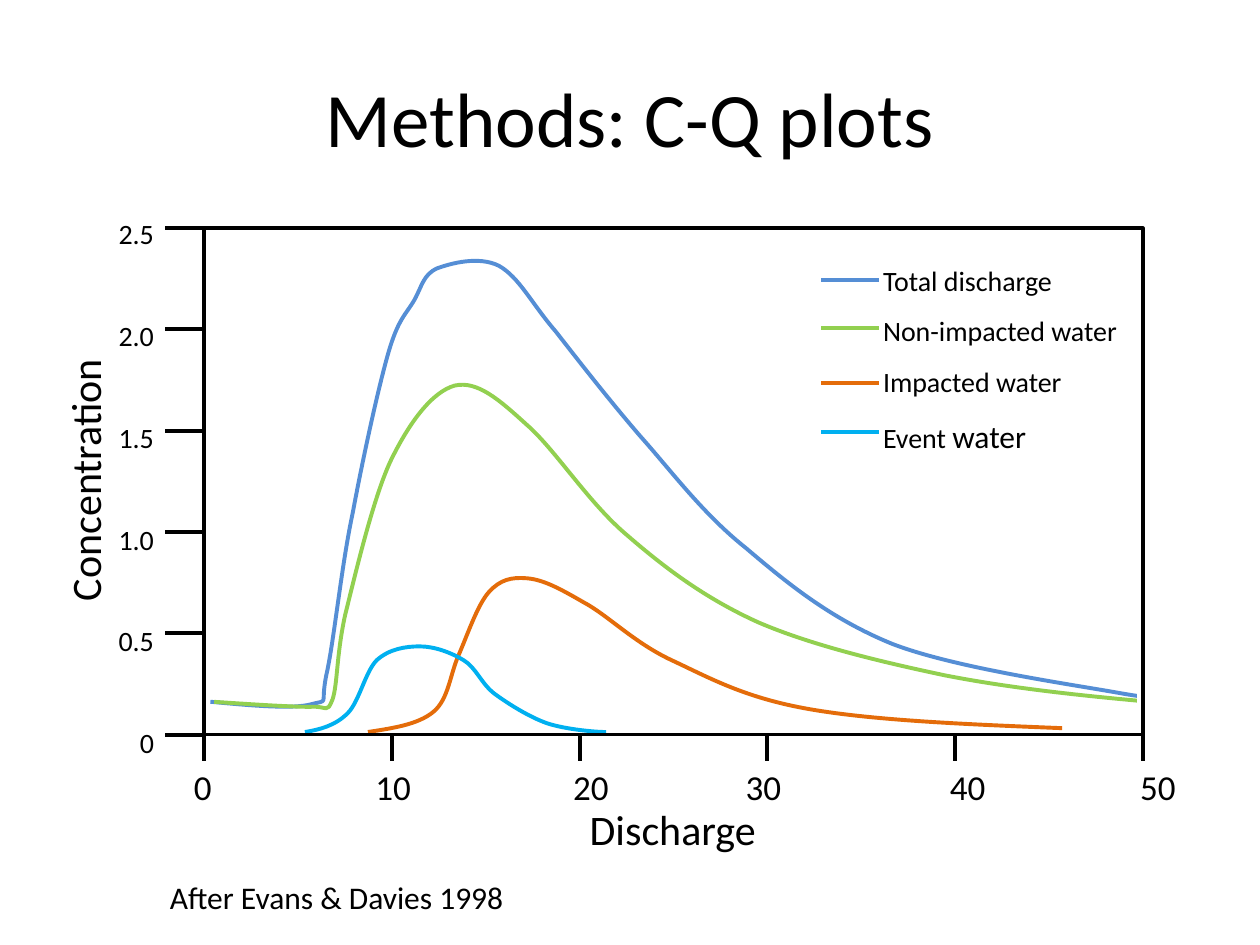
from dataclasses import dataclass
from typing import Optional

from lxml.etree import SubElement
from pptx import Presentation
from pptx.dml.color import RGBColor
from pptx.enum.shapes import MSO_CONNECTOR as Connector, MSO_SHAPE as Preset
from pptx.enum.text import MSO_ANCHOR as Anchor, PP_ALIGN as Align
from pptx.oxml.ns import qn
from pptx.util import Emu, Inches, Pt

COLUMNS, ROWS = 100, 75
CELL = Inches(10) // COLUMNS
STEPS_PER_CELL = 10
FONT = "Calibri"
COLORS = {
    "text": "000000",
    "axis": "000000",
    "paper": "FFFFFF",
    "total": "558ED5",
    "non_impacted": "92D050",
    "impacted": "E46C0A",
    "event": "00B0F0",
}
PLOT_LEFT, PLOT_TOP, PLOT_WIDTH, PLOT_HEIGHT = 16.2, 18.1, 74.5, 40.2
INTERVALS = 5
TICK_DOWN, TICK_LEFT = 2.1, 3.1
LEGEND_LEFT, LEGEND_RIGHT = 65.2, 69.8


@dataclass
class Label:
    lines: list[list[tuple[str, int]]]
    left: float
    top: float
    width: float
    height: float
    align: Align = Align.LEFT
    wrap: bool = True
    anchor: Anchor = Anchor.TOP
    rotation: int = 0
    line_spacing: Optional[float] = None
    gap_before: int = 0
    tab_stops: tuple[float, ...] = ()


@dataclass
class Curve:
    color: str
    legend_row: float
    points: list[tuple[float, float]]


TOTAL = Curve("total", 22.2, [
    (16.7, 55.7), (19.9, 56), (23.2, 56.3), (24.7, 55.9),
    (26.2, 55.5), (25.4, 56.1), (25.9, 53.6), (26.5, 51), (27.1, 44.9), (28, 40.7),
    (28.8, 36.4), (30, 30.9), (30.8, 28.1), (31.6, 25.3), (32.2, 25), (32.9, 23.8),
    (33.5, 22.7), (33.6, 21.8), (34.7, 21.3), (35.8, 20.9), (38, 20.3), (39.6, 21.1),
    (41.2, 22), (42.2, 24.1), (44.1, 26.3), (45.9, 28.6), (48.3, 31.7), (50.8, 34.6),
    (53.3, 37.4), (55.8, 40.8), (59.2, 43.5), (62.5, 46.3), (65.9, 49.1), (70.8, 51.1),
    (75.7, 53), (84.9, 54.3), (88.8, 55), (92.7, 55.7), (93.4, 55.4), (94.1, 55.2),
])
NON_IMPACTED = Curve("non_impacted", 26, [
    (17, 55.7), (20, 55.9), (23, 56.1), (24.6, 56.1),
    (26.1, 56), (25.9, 56.7), (26.4, 55.5), (26.8, 54.3), (26.7, 52), (27.4, 48.8),
    (28.2, 45.6), (29.6, 39.6), (31, 36.6), (32.5, 33.5), (34.3, 31.1), (36.1, 30.6),
    (37.9, 30.2), (39.6, 31.7), (41.8, 33.7), (44.1, 35.7), (46.7, 39.9), (49.8, 42.5),
    (52.8, 45.1), (56, 47.5), (60.2, 49.4), (64.4, 51.2), (69.8, 52.5), (75, 53.6),
    (80.1, 54.6), (85.7, 55.2), (91.3, 55.7),
])
IMPACTED = Curve("impacted", 30.4, [
    (29.2, 58.1), (31.2, 57.8), (33.2, 57.5), (34.4, 56.5),
    (35.6, 55.5), (35.7, 53.6), (36.4, 52), (37.1, 50.4), (37.9, 48), (38.8, 47),
    (39.7, 46), (40.6, 45.8), (41.8, 45.9), (43.1, 46), (44.4, 46.7), (46.3, 47.8),
    (48.2, 48.8), (50.3, 51), (53.3, 52.4), (56.3, 53.8), (59.1, 55.4), (64.3, 56.3),
    (69.5, 57.2), (76.9, 57.5), (84.3, 57.8),
])
EVENT = Curve("event", 34.3, [
    (24.2, 58.1), (25.4, 57.9), (26.6, 57.6), (27.6, 56.6),
    (28.5, 55.7), (29, 53.3), (29.9, 52.4), (30.9, 51.5), (32.2, 51.3), (33.3, 51.3),
    (34.5, 51.3), (35.8, 51.8), (36.8, 52.4), (37.8, 53), (38.2, 54.3), (39.3, 55.1),
    (40.4, 55.9), (42, 56.9), (43.4, 57.4), (44.9, 57.9), (47.3, 58.1), (48.1, 58.1),
])
LABELS = [
    Label([[("Methods: C-Q plots", 44)]], 5, 3, 90, 12.5, Align.CENTER, anchor=Anchor.MIDDLE),
    Label([[("After Evans & Davies 1998", 18)]], 12.5, 69.2, 28.8, 4, wrap=False),
    Label([[("Discharge", 24)]], 38.6, 63.3, 29.6, 5, Align.CENTER),
    Label([[("Concentration", 24)]], -12.3, 35.6, 38, 5, Align.CENTER, rotation=270),
    Label([[("0\t10\t20\t30\t40\t50", 20)]], 14.4, 60.3, 81.9, 4.4,
          tab_stops=(14.4, 30.1, 43.8, 60, 75.1)),
    Label([[(text, 16)] for text in ("2.5", "2.0", "1.5", "1.0", "0.5", "0")],
          8.3, 16.7, 4.9, 44.1, Align.RIGHT, wrap=False, gap_before=39),
    Label([[("Total discharge", 16)], [("Non-impacted water", 16)], [("Impacted water", 16)],
           [("Event ", 16), ("water", 18)]], 69.1, 19.1, 20.8, 17.7, wrap=False, line_spacing=1.5),
]


def cells(count: float) -> Emu:
    return Emu(round(count * CELL))


def color(name: str) -> RGBColor:
    return RGBColor.from_string(COLORS[name])


def add_label(slide, label: Label) -> None:
    box = slide.shapes.add_textbox(*map(cells, (label.left, label.top, label.width, label.height)))
    box.rotation = label.rotation
    frame = box.text_frame
    frame.word_wrap = label.wrap
    frame.vertical_anchor = label.anchor
    for index, line in enumerate(label.lines):
        paragraph = frame.add_paragraph() if index else frame.paragraphs[0]
        paragraph.alignment = label.align
        if label.line_spacing:
            paragraph.line_spacing = label.line_spacing
        if index and label.gap_before:
            paragraph.space_before = Pt(label.gap_before)
        if label.tab_stops:
            tabs = SubElement(paragraph._p.get_or_add_pPr(), qn("a:tabLst"))
            for stop in label.tab_stops:
                SubElement(tabs, qn("a:tab"), pos=str(cells(stop)), algn="l")
        for text, size in line:
            run = paragraph.add_run()
            run.text = text
            run.font.name = FONT
            run.font.size = Pt(size)
            run.font.color.rgb = color("text")


def add_line(slide, start: tuple[float, float], end: tuple[float, float], name: str) -> None:
    line = slide.shapes.add_connector(Connector.STRAIGHT, *map(cells, (*start, *end)))
    line.line.color.rgb = color(name)
    line.line.width = Pt(2.25)
    SubElement(line._element.spPr, qn("a:effectLst"))


def add_rectangle(slide, bounds: tuple[float, ...], outline: str, fill: Optional[str] = None) -> None:
    shape = slide.shapes.add_shape(Preset.RECTANGLE, *map(cells, bounds))
    shape.shadow.inherit = False
    if fill:
        shape.fill.solid()
        shape.fill.fore_color.rgb = color(fill)
    else:
        shape.fill.background()
    shape.line.color.rgb = color(outline)
    shape.line.width = Pt(2)


def add_curve(slide, curve: Curve) -> None:
    start, *others = [(round(x * STEPS_PER_CELL), round(y * STEPS_PER_CELL)) for x, y in curve.points]
    builder = slide.shapes.build_freeform(*start, scale=CELL / STEPS_PER_CELL)
    builder.add_line_segments(others, close=False)
    shape = builder.convert_to_shape()
    shape.shadow.inherit = False
    shape.fill.background()
    shape.line.color.rgb = color(curve.color)
    shape.line.width = Pt(2.25)
    outline = next(shape._element.iter(qn("a:path")))
    segments = outline.findall(qn("a:lnTo"))
    for index in range(0, len(segments), 3):
        bezier = SubElement(outline, qn("a:cubicBezTo"))
        for segment in segments[index:index + 3]:
            bezier.append(segment[0])
            outline.remove(segment)


def add_ticks(slide) -> None:
    bottom = PLOT_TOP + PLOT_HEIGHT
    for index in range(INTERVALS + 1):
        x = PLOT_LEFT + index * PLOT_WIDTH / INTERVALS
        y = PLOT_TOP + index * PLOT_HEIGHT / INTERVALS
        add_line(slide, (x, bottom), (x, bottom + TICK_DOWN), "axis")
        add_line(slide, (PLOT_LEFT, y), (PLOT_LEFT - TICK_LEFT, y), "axis")


def main() -> None:
    presentation = Presentation()
    presentation.slide_width = COLUMNS * CELL
    presentation.slide_height = ROWS * CELL
    slide = presentation.slides.add_slide(presentation.slide_layouts[6])
    add_curve(slide, IMPACTED)
    add_ticks(slide)
    add_curve(slide, TOTAL)
    add_curve(slide, NON_IMPACTED)
    add_rectangle(slide, (90.4, 45.6, 4.6, 12.3), "paper", "paper")
    for curve in (TOTAL, NON_IMPACTED, IMPACTED, EVENT):
        add_line(slide, (LEGEND_LEFT, curve.legend_row), (LEGEND_RIGHT, curve.legend_row), curve.color)
    for label in LABELS:
        add_label(slide, label)
    add_curve(slide, EVENT)
    add_rectangle(slide, (PLOT_LEFT, PLOT_TOP, PLOT_WIDTH, PLOT_HEIGHT), "axis")
    presentation.save("out.pptx")


if __name__ == "__main__":
    main()
